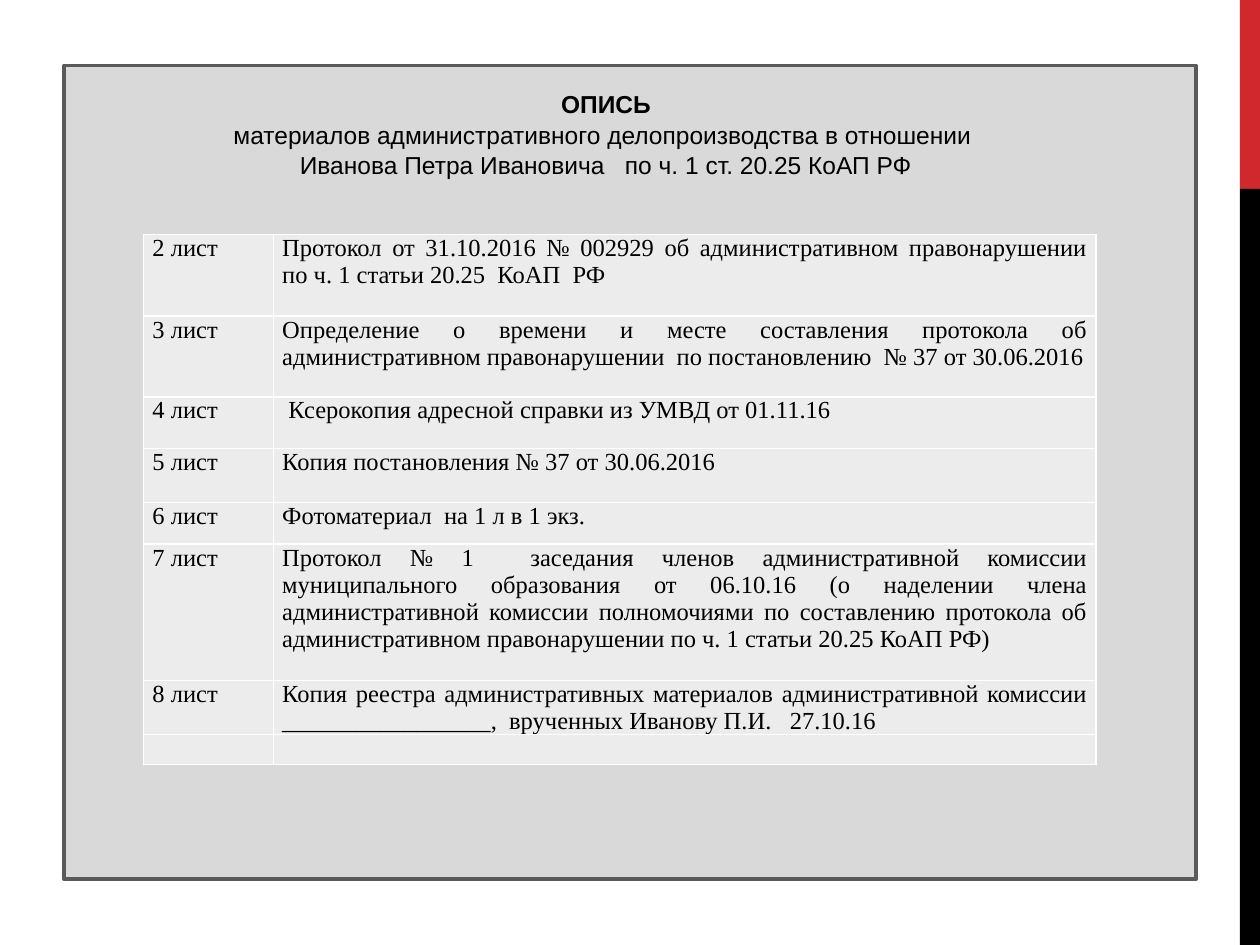
"""Build a slide listing the sheets of an administrative case file."""
from dataclasses import dataclass
from typing import Optional

import lxml.etree
import pptx
import pptx.dml.color
import pptx.enum.shapes
import pptx.enum.text
import pptx.oxml.ns
import pptx.util

Inches = pptx.util.Inches
Pt = pptx.util.Pt
RGBColor = pptx.dml.color.RGBColor
Align = pptx.enum.text.PP_ALIGN
qn = pptx.oxml.ns.qn

RED = RGBColor(0xD1, 0x28, 0x2E)
BLACK = RGBColor(0, 0, 0)
WHITE = RGBColor(0xFF, 0xFF, 0xFF)
GREY = RGBColor(0xD9, 0xD9, 0xD9)
EDGE = RGBColor(0x5A, 0x5A, 0x5A)
PALE = RGBColor(0xEC, 0xEC, 0xEC)


@dataclass
class Box:
    left: float
    top: float
    width: float
    height: float
    fill: RGBColor
    line: Optional[RGBColor] = None


@dataclass
class Entry:
    sheet: str
    text: str
    height: float


BOXES = [
    Box(9.84, 0, 0.16, 1.5, RED),
    Box(9.84, 1.5, 0.16, 6, BLACK),
    Box(0.51, 0.52, 8.98, 6.46, GREY, EDGE),
]
WIDTHS = [1.03, 6.53]
ENTRIES = [
    Entry("2 лист", "Протокол от 31.10.2016 № 002929 об административном "
          "правонарушении по ч. 1 статьи 20.25  КоАП  РФ", 0.65),
    Entry("3 лист", "Определение о времени и месте составления протокола об "
          "административном правонарушении  по постановлению  "
          "№ 37 от 30.06.2016", 0.64),
    Entry("4 лист", " Ксерокопия адресной справки из УМВД от 01.11.16", 0.41),
    Entry("5 лист", "Копия постановления № 37 от 30.06.2016", 0.43),
    Entry("6 лист", "Фотоматериал  на 1 л в 1 экз.", 0.33),
    Entry("7 лист", "Протокол № 1  заседания членов административной комиссии "
          "муниципального образования от 06.10.16 (о наделении члена "
          "административной комиссии полномочиями по составлению протокола об "
          "административном правонарушении по ч. 1 статьи 20.25 КоАП РФ)",
          1.08),
    Entry("8 лист", "Копия реестра административных материалов "
          "административной комиссии _________________,  "
          "врученных Иванову П.И.   27.10.16", 0.43),
    Entry("", "", 0.22),
]
HEADING = [
    ("ОПИСЬ", True),
    ("материалов административного делопроизводства в отношении ", False),
    ("Иванова Петра Ивановича   по ч. 1 ст. 20.25 КоАП РФ", False),
]


def add_run(para, text: str, face: str, bold: bool = False) -> None:
    run = para.add_run()
    run.text = text
    run.font.name = face
    run.font.size = Pt(14)
    run.font.bold = bold
    run.font.color.rgb = BLACK


def draw_box(slide, box: Box) -> None:
    shape = slide.shapes.add_shape(
        pptx.enum.shapes.MSO_SHAPE.RECTANGLE, Inches(box.left),
        Inches(box.top), Inches(box.width), Inches(box.height))
    shape.shadow.inherit = False
    shape.fill.solid()
    shape.fill.fore_color.rgb = box.fill
    if box.line is None:
        shape.line.fill.background()
    else:
        shape.line.color.rgb = box.line
        shape.line.width = Pt(2.25)


def draw_edges(cell) -> None:
    props = cell._tc.get_or_add_tcPr()
    for side in ("a:lnL", "a:lnR", "a:lnT", "a:lnB"):
        line = lxml.etree.SubElement(props, qn(side), w=str(Pt(1)))
        fill = lxml.etree.SubElement(line, qn("a:solidFill"))
        lxml.etree.SubElement(fill, qn("a:srgbClr"), val=str(WHITE))


def fill_cell(cell, text: str) -> None:
    draw_edges(cell)
    cell.fill.solid()
    cell.fill.fore_color.rgb = PALE
    cell.margin_left = cell.margin_right = Inches(0.07)
    cell.margin_top = cell.margin_bottom = 0
    para = cell.text_frame.paragraphs[0]
    para.alignment = Align.JUSTIFY
    if text:
        add_run(para, text, "Times New Roman")
    else:
        lxml.etree.SubElement(para._p, qn("a:endParaRPr"), sz="1400")


def draw_table(slide) -> None:
    total = sum(entry.height for entry in ENTRIES)
    table = slide.shapes.add_table(
        len(ENTRIES), len(WIDTHS), Inches(1.14), Inches(1.86),
        Inches(sum(WIDTHS)), Inches(total)).table
    table.first_row = table.horz_banding = False
    for col, width in zip(table.columns, WIDTHS):
        col.width = Inches(width)
    for row, entry in zip(table.rows, ENTRIES):
        row.height = Inches(entry.height)
        for cell, text in zip(row.cells, (entry.sheet, entry.text)):
            fill_cell(cell, text)


def draw_title(slide) -> None:
    title = slide.shapes.title
    title.left, title.top = Inches(0.91), Inches(0.42)
    title.width, title.height = Inches(7.8), Inches(1.35)
    slide.shapes._spTree.append(title._element)
    frame = title.text_frame
    frame.word_wrap = True
    frame.auto_size = pptx.enum.text.MSO_AUTO_SIZE.NONE
    frame.vertical_anchor = pptx.enum.text.MSO_ANCHOR.MIDDLE
    frame.margin_bottom = Inches(0.12)
    for i, (text, bold) in enumerate(HEADING):
        para = frame.add_paragraph() if i else frame.paragraphs[0]
        para.alignment = Align.CENTER
        para.line_spacing = 1.05
        para.space_before = Pt(0)
        add_run(para, text, "Arial", bold)


def main() -> None:
    deck = pptx.Presentation()
    deck.slide_width, deck.slide_height = Inches(10), Inches(7.5)
    slide = deck.slides.add_slide(deck.slide_layouts[5])
    for box in BOXES:
        draw_box(slide, box)
    draw_table(slide)
    draw_title(slide)
    deck.save("out.pptx")


if __name__ == "__main__":
    main()
